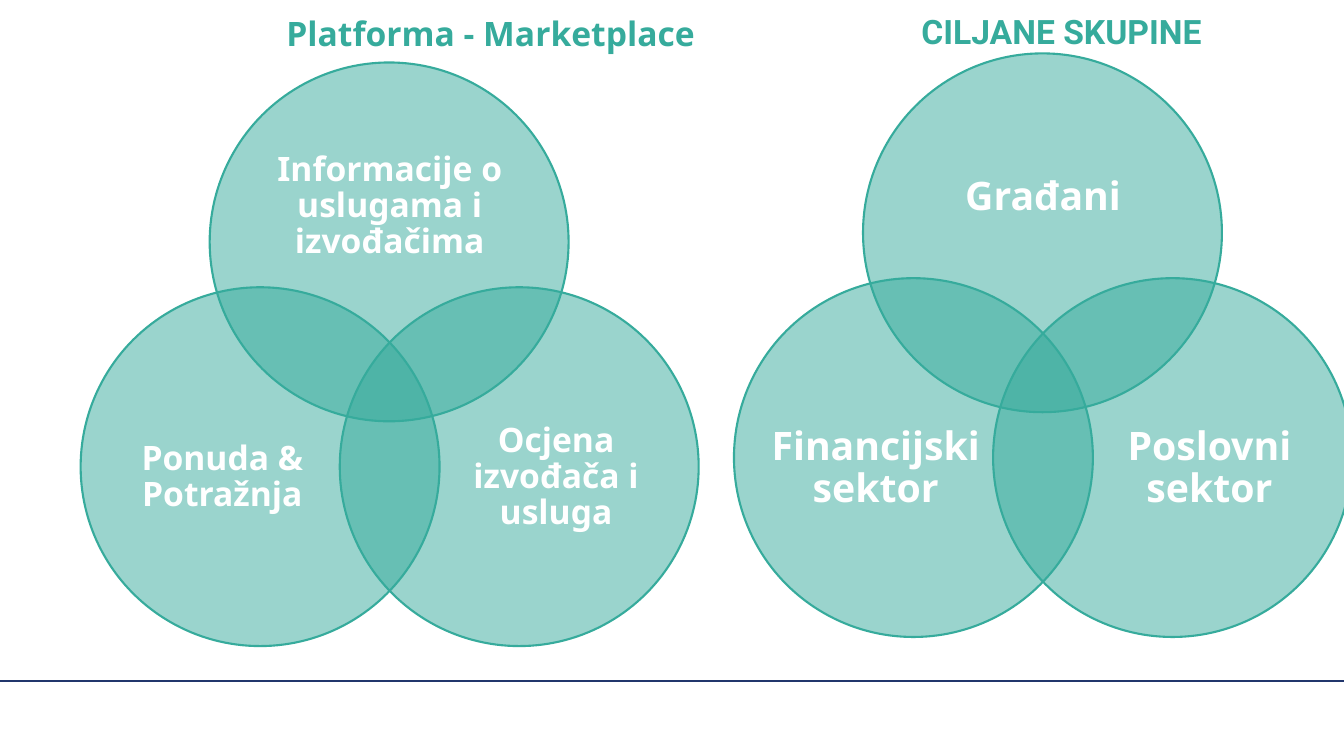
from dataclasses import dataclass

from lxml.etree import SubElement
from pptx import Presentation
from pptx.dml.color import RGBColor
from pptx.enum.shapes import MSO_CONNECTOR, MSO_SHAPE
from pptx.enum.text import MSO_ANCHOR, MSO_AUTO_SIZE, PP_ALIGN
from pptx.oxml.ns import qn
from pptx.shapes.shapetree import GroupShapes, SlideShapes
from pptx.text.text import TextFrame
from pptx.util import Emu, Pt

TEAL = RGBColor(0x36, 0xAB, 0x9C)
NAVY = RGBColor(0x21, 0x36, 0x6C)
WHITE = RGBColor(0xFF, 0xFF, 0xFF)

EMU_PER_PX = 9144  # 100 px to the inch
PAGE_WIDTH, PAGE_HEIGHT = 1333, 750
FOOTER_Y = 676
DIAMETER = 356


@dataclass(frozen=True)
class Title:
    text: str
    font: str
    left: int
    top: int
    width: int
    height: int
    inset_x: int
    inset_y: int


@dataclass(frozen=True)
class Petal:
    """One circle and its label, measured from the corner of its diagram."""
    circle_left: int
    circle_top: int
    label_left: int
    label_top: int
    label_width: int
    label_height: int


@dataclass(frozen=True)
class Venn:
    left: int
    top: int
    size: int
    labels: tuple[str, str, str]


PETALS = (
    Petal(128, 0, 176, 63, 261, 160),
    Petal(257, 223, 365, 314, 213, 196),
    Petal(0, 223, 34, 314, 213, 196),
)
VENNS = (
    Venn(80, 62, 24, ("Informacije o uslugama i izvođačima",
                      "Ocjena izvođača i usluga", "Ponuda & Potražnja")),
    Venn(728, 53, 28, ("Građani", "Poslovni sektor", "Financijski sektor")),
)
TITLES = (
    Title("Platforma - Marketplace", "Noto Sans", 277, 10, 497, 70, 7, 3),
    Title("CILJANE SKUPINE", "Roboto", 904, 6, 330, 50, 10, 5),
)


def px(length: int) -> Emu:
    return Emu(length * EMU_PER_PX)


def set_insets(frame: TextFrame, x: int, y: int) -> None:
    frame.margin_left = frame.margin_right = px(x)
    frame.margin_top = frame.margin_bottom = px(y)


def write(frame: TextFrame, text: str, font: str, size: int, color: RGBColor) -> None:
    frame.word_wrap = True
    span = frame.paragraphs[0].add_run()
    span.text = text
    span.font.name = font
    span.font.size = Pt(size)
    span.font.bold = True
    span.font.color.rgb = color


def draw_circle(shapes: GroupShapes, left: int, top: int) -> None:
    circle = shapes.add_shape(MSO_SHAPE.OVAL, px(left), px(top), px(DIAMETER), px(DIAMETER))
    circle.shadow.inherit = False
    circle.fill.solid()
    circle.fill.fore_color.rgb = TEAL
    color = circle.fill._xPr.find(qn("a:solidFill"))[0]
    SubElement(color, qn("a:alpha"), val="50000")
    circle.line.color.rgb = TEAL
    circle.line.width = Pt(1.5)


def draw_venn(shapes: SlideShapes, venn: Venn) -> None:
    group = shapes.add_group_shape()
    for petal, text in zip(PETALS, venn.labels):
        draw_circle(group.shapes, venn.left + petal.circle_left, venn.top + petal.circle_top)
        label = group.shapes.add_textbox(
            px(venn.left + petal.label_left), px(venn.top + petal.label_top),
            px(petal.label_width), px(petal.label_height))
        frame = label.text_frame
        set_insets(frame, 0, 0)
        frame.vertical_anchor = MSO_ANCHOR.MIDDLE
        write(frame, text, "Noto Sans", venn.size, WHITE)
        para = frame.paragraphs[0]
        para.alignment = PP_ALIGN.CENTER
        para.line_spacing = 0.9


def draw_title(shapes: SlideShapes, title: Title) -> None:
    box = shapes.add_textbox(px(title.left), px(title.top), px(title.width), px(title.height))
    set_insets(box.text_frame, title.inset_x, title.inset_y)
    write(box.text_frame, title.text, title.font, 24, TEAL)
    box.text_frame.auto_size = MSO_AUTO_SIZE.SHAPE_TO_FIT_TEXT


def draw_footer_rule(shapes: SlideShapes) -> None:
    rule = shapes.add_connector(
        MSO_CONNECTOR.STRAIGHT, px(0), px(FOOTER_Y), px(PAGE_WIDTH), px(FOOTER_Y))
    rule.line.color.rgb = NAVY
    rule.line.width = Pt(1.5)
    SubElement(rule._element.spPr, qn("a:effectLst"))


def main() -> None:
    deck = Presentation()
    deck.slide_width, deck.slide_height = px(PAGE_WIDTH), px(PAGE_HEIGHT)
    page = deck.slides.add_slide(deck.slide_layouts[6])
    draw_footer_rule(page.shapes)
    for venn, title in zip(VENNS, TITLES):
        draw_venn(page.shapes, venn)
        draw_title(page.shapes, title)
    deck.save("out.pptx")


if __name__ == "__main__":
    main()
